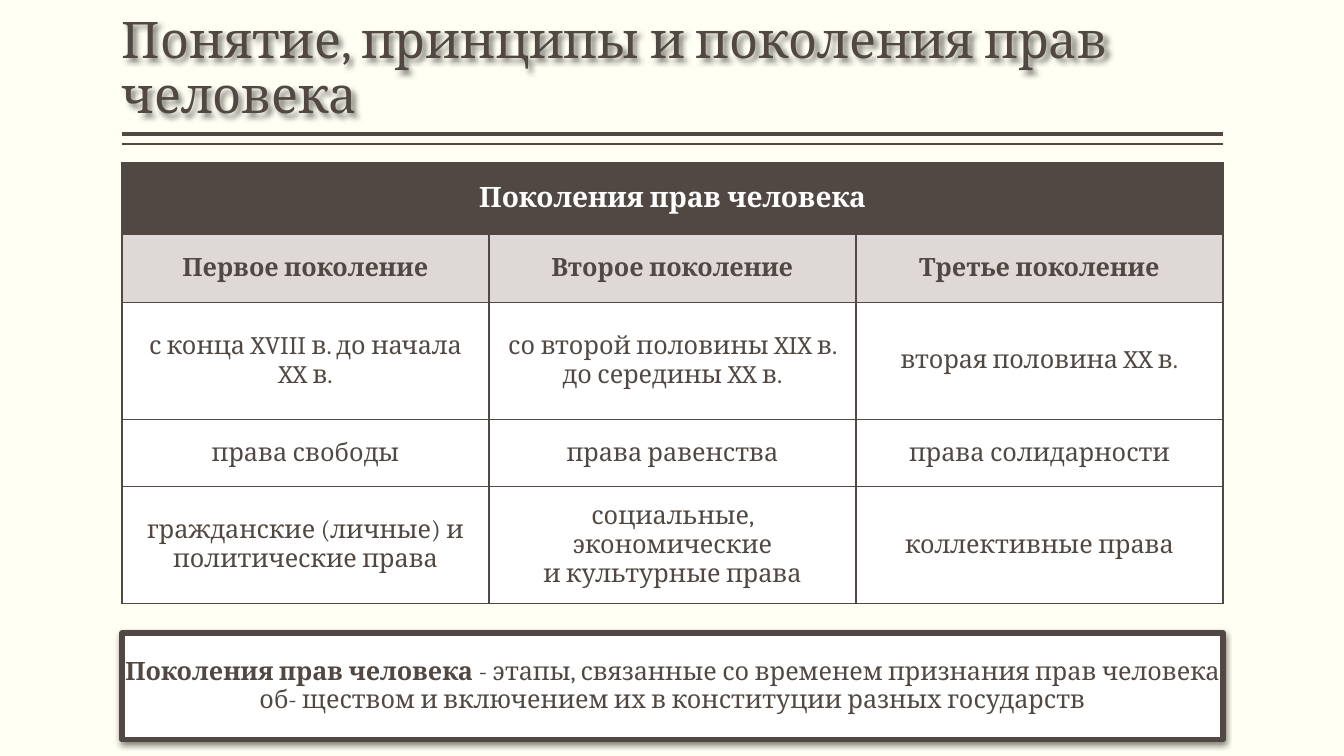
import pptx
import pptx.dml.color
import pptx.enum.shapes
import pptx.enum.text
import pptx.oxml
import pptx.oxml.ns
import pptx.util
from pptx.util import Inches

COLORS = {"page": "FFFFF3", "dark": "514843", "band": "DED9D6",
          "white": "FFFFFF", "shadow": "000000"}
FONT = "Cambria"
LEFT, WIDTH = 1.21, 10.92
MIDDLE = pptx.enum.text.MSO_ANCHOR.MIDDLE
CENTER = pptx.enum.text.PP_ALIGN.CENTER

HEADING = "Поколения прав человека"
ROWS = [
    [HEADING, "", ""],
    ["Первое поколение", "Второе поколение", "Третье поколение"],
    ["с конца XVIII в. до начала XX в.",
     "со второй половины XIX в. до середины XX в.",
     "вторая половина XX в."],
    ["права свободы", "права равенства", "права солидарности"],
    ["гражданские (личные) и политические права",
     "социальные, экономические\nи культурные права",
     "коллективные права"],
]
ROW_HEIGHTS = [0.72, 0.67, 1.16, 0.67, 1.16]
HEADING_STYLE = {"fill": "dark", "color": "white", "size": 20, "bold": True}
COLUMN_STYLE = {"fill": "band", "color": "dark", "size": 18, "bold": True}
BODY_STYLE = {"fill": "white", "color": "dark", "size": 18, "bold": False}
ROW_STYLES = [HEADING_STYLE, COLUMN_STYLE] + [BODY_STYLE] * 3


def color(name):
    return pptx.dml.color.RGBColor.from_string(COLORS[name])


def set_all(target, values):
    for name, value in values.items():
        setattr(target, name, value)


def fill_solid(fill, name):
    fill.solid()
    fill.fore_color.rgb = color(name)


def format_line(line, width):
    line.color.rgb = color("dark")
    line.width = pptx.util.Pt(width)


def add_span(para, text, size, name="dark", bold=False):
    span = para.add_run()
    span.text = text
    set_all(span.font, {"name": FONT, "size": pptx.util.Pt(size), "bold": bold})
    span.font.color.rgb = color(name)


def add_shadow(shape, blur, distance, degrees):
    """Give a shape a soft half-transparent shadow; lengths in points."""
    shape.shadow.inherit = False
    effects = shape._element.spPr.find(pptx.oxml.ns.qn("a:effectLst"))
    effects.append(pptx.oxml.parse_xml(
        f'<a:outerShdw {pptx.oxml.ns.nsdecls("a")} blurRad="{pptx.util.Pt(blur)}" '
        f'dist="{pptx.util.Pt(distance)}" dir="{degrees * 60000}" rotWithShape="0">'
        f'<a:srgbClr val="{COLORS["shadow"]}"><a:alpha val="50000"/></a:srgbClr>'
        '</a:outerShdw>'))


def add_rule(page, top, width):
    rule = page.shapes.add_connector(
        pptx.enum.shapes.MSO_CONNECTOR.STRAIGHT,
        Inches(LEFT + WIDTH), Inches(top), Inches(LEFT), Inches(top))
    format_line(rule.line, width)
    pptx.oxml.ns.qn("a:effectLst")
    rule._element.spPr.append(pptx.oxml.parse_xml(
        f'<a:effectLst {pptx.oxml.ns.nsdecls("a")}/>'))


def add_title(page, text):
    box = page.shapes.add_textbox(Inches(LEFT), Inches(0.08), Inches(WIDTH), Inches(1.2))
    set_all(box.text_frame, {
        "word_wrap": True, "vertical_anchor": pptx.enum.text.MSO_ANCHOR.BOTTOM,
        "margin_left": 0, "margin_right": 0})
    para = box.text_frame.paragraphs[0]
    para.line_spacing = 0.9
    add_span(para, text, 36)
    add_shadow(box, 4, 3, 45)


def add_definition(page, term, meaning):
    box = page.shapes.add_shape(
        pptx.enum.shapes.MSO_SHAPE.RECTANGLE,
        Inches(LEFT), Inches(6.28), Inches(WIDTH), Inches(1.06))
    fill_solid(box.fill, "white")
    format_line(box.line, 3.78)
    add_shadow(box, 4.5, 1.5, 90)
    margins = dict.fromkeys(
        ["margin_left", "margin_top", "margin_right", "margin_bottom"], Inches(0.01))
    set_all(box.text_frame, {"word_wrap": True, "vertical_anchor": MIDDLE, **margins})
    para = box.text_frame.paragraphs[0]
    set_all(para, {"alignment": CENTER, "line_spacing": 0.9})
    add_span(para, term, 18, bold=True)
    add_span(para, meaning, 18)


def add_borders(cell):
    properties = cell._tc.get_or_add_tcPr()
    for index, side in enumerate(["lnL", "lnR", "lnT", "lnB"]):
        properties.insert(index, pptx.oxml.parse_xml(
            f'<a:{side} {pptx.oxml.ns.nsdecls("a")} w="{pptx.util.Pt(1)}"><a:solidFill>'
            f'<a:srgbClr val="{COLORS["dark"]}"/></a:solidFill></a:{side}>'))


def fill_cell(cell, text, style):
    fill_solid(cell.fill, style["fill"])
    add_borders(cell)
    cell.vertical_anchor = MIDDLE
    for index, line in enumerate(text.split("\n")):
        frame = cell.text_frame
        para = frame.add_paragraph() if index else frame.paragraphs[0]
        para.alignment = CENTER
        if line:
            add_span(para, line, style["size"], style["color"], style["bold"])


def add_generations(page):
    table = page.shapes.add_table(
        len(ROWS), 3, Inches(LEFT), Inches(1.61),
        Inches(WIDTH), Inches(sum(ROW_HEIGHTS))).table
    for column in table.columns:
        column.width = Inches(WIDTH / 3)
    for row, height, texts, style in zip(table.rows, ROW_HEIGHTS, ROWS, ROW_STYLES):
        row.height = Inches(height)
        for cell, text in zip(row.cells, texts):
            fill_cell(cell, text, style)
    table.cell(0, 0).merge(table.cell(0, 2))


def main():
    deck = pptx.Presentation()
    set_all(deck, {"slide_width": Inches(13.33), "slide_height": Inches(7.5)})
    page = deck.slides.add_slide(deck.slide_layouts[6])
    fill_solid(page.background.fill, "page")
    add_rule(page, 1.33, 3)
    add_rule(page, 1.43, 1)
    add_title(page, "Понятие, принципы и поколения прав человека")
    add_definition(page, HEADING + " ",
                   "- этапы, связанные со временем признания прав человека "
                   "об- ществом и включением их в конституции разных государств")
    add_generations(page)
    deck.save("out.pptx")


if __name__ == "__main__":
    main()
